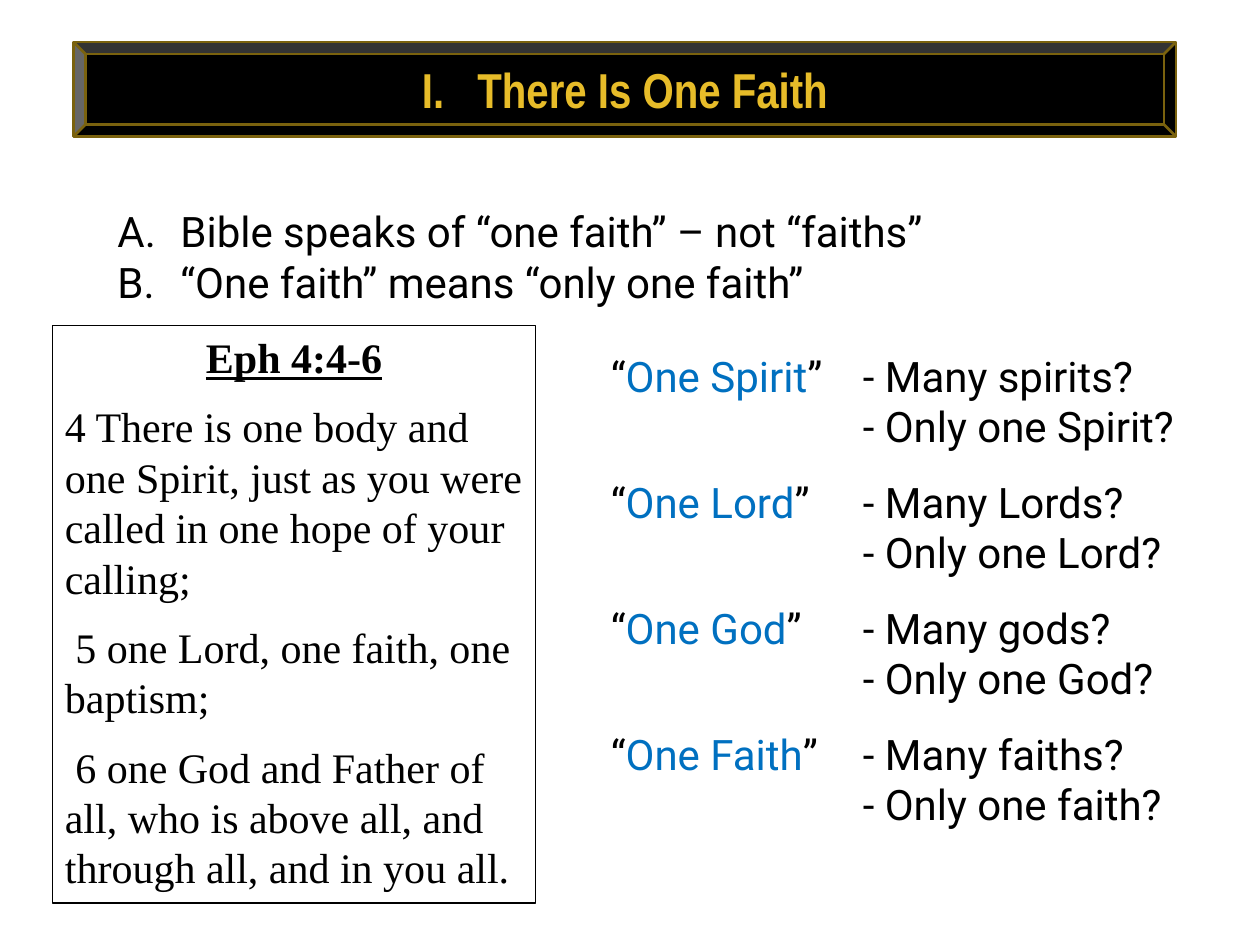
import dataclasses

import pptx
import pptx.dml.color
import pptx.enum.shapes
import pptx.enum.text
import pptx.oxml.ns
import pptx.util
from lxml import etree

SHAPE = pptx.enum.shapes.MSO_SHAPE
ALIGN = pptx.enum.text.PP_ALIGN
ANCHOR = pptx.enum.text.MSO_ANCHOR
AUTO_SIZE = pptx.enum.text.MSO_AUTO_SIZE
Pt = pptx.util.Pt
Inches = pptx.util.Inches

COLS, ROWS = 120, 90


@dataclasses.dataclass(frozen=True)
class Theme:
    ink: str = "000000"
    paper: str = "FFFFFF"
    gold: str = "E7BC29"
    bronze: str = "7A620E"
    blue: str = "0070C0"
    title_font: str = "Arial Narrow"
    body_font: str = "Roboto"
    verse_font: str = "Times New Roman"
    title_size: float = 28
    body_size: float = 24
    leading: float = 28.8
    verse_gap: float = 10.8
    pair_gap: float = 14.4


class SlideBuilder:
    def __init__(self, prs, theme):
        self.theme = theme
        self.cell_w = prs.slide_width / COLS
        self.cell_h = prs.slide_height / ROWS
        self.s = prs.slides.add_slide(prs.slide_layouts[5])

    def box(self, col, row, cols, rows):
        """Turn grid cells into left, top, width and height."""
        return (round(col * self.cell_w), round(row * self.cell_h),
                round(cols * self.cell_w), round(rows * self.cell_h))

    def panel(self, kind, grid, fill, line, width):
        sp = self.s.shapes.add_shape(kind, *self.box(*grid))
        sp.shadow.inherit = False
        sp.fill.solid()
        sp.fill.fore_color.rgb = pptx.dml.color.RGBColor.from_string(fill)
        sp.line.color.rgb = pptx.dml.color.RGBColor.from_string(line)
        sp.line.width = Pt(width)
        return sp

    def title(self, text, grid):
        sp = self.s.shapes.title
        sp.left, sp.top, sp.width, sp.height = self.box(*grid)
        # The placeholder comes first in the tree; lift it above its frame.
        self.s.shapes._spTree.append(sp._element)
        tf = self.frame(sp, ANCHOR.MIDDLE)
        t = self.theme
        p = self.paragraph(
            tf, [(text, t.gold)], {"alignment": ALIGN.CENTER},
            {"name": t.title_font, "size": Pt(t.title_size), "bold": True})
        self.indent(p, 0.44, -0.44, "romanUcPeriod")

    def text_box(self, grid):
        return self.frame(self.s.shapes.add_textbox(*self.box(*grid)))

    def frame(self, sp, anchor=ANCHOR.TOP):
        tf = sp.text_frame
        settings = {"word_wrap": True, "auto_size": AUTO_SIZE.NONE,
                    "vertical_anchor": anchor}
        for name, value in settings.items():
            setattr(tf, name, value)
        return tf

    def paragraph(self, tf, runs, layout=None, font=None):
        """Fill the first paragraph if it is free, else add one."""
        t = self.theme
        p = tf.paragraphs[0]
        if p.runs:
            p = tf.add_paragraph()
        layout = {"alignment": ALIGN.LEFT, "space_before": Pt(0)} | (layout or {})
        for name, value in layout.items():
            setattr(p, name, value)
        font = {"name": t.body_font, "size": Pt(t.body_size)} | (font or {})
        for text, color in runs:
            r = p.add_run()
            r.text = text
            for name, value in font.items():
                setattr(r.font, name, value)
            r.font.color.rgb = pptx.dml.color.RGBColor.from_string(color)
        return p

    def indent(self, p, left, first, numbering=None):
        p_pr = p._p.get_or_add_pPr()
        p_pr.set("marL", str(Inches(left)))
        p_pr.set("indent", str(Inches(first)))
        if numbering:
            etree.SubElement(p_pr, pptx.oxml.ns.qn("a:buAutoNum"), type=numbering)

    def numbered_list(self, grid, items):
        tf = self.text_box(grid)
        for item in items:
            p = self.paragraph(tf, [(item, self.theme.ink)],
                               {"line_spacing": Pt(self.theme.leading)})
            self.indent(p, 0.5, -0.5, "alphaUcPeriod")

    def scripture(self, grid, heading, verses):
        t = self.theme
        tf = self.frame(self.panel(SHAPE.RECTANGLE, grid, t.paper, t.ink, 0.75))
        leading = {"line_spacing": Pt(t.leading)}
        font = {"name": t.verse_font}
        self.paragraph(tf, [(heading, t.ink)],
                       leading | {"alignment": ALIGN.CENTER},
                       font | {"bold": True, "underline": True})
        for verse in verses:
            self.paragraph(tf, [(verse, t.ink)],
                           leading | {"space_before": Pt(t.verse_gap)}, font)

    def questions(self, grid, pairs):
        t = self.theme
        tf = self.text_box(grid)
        leading = {"line_spacing": Pt(t.leading)}
        for i, (one, many) in enumerate(pairs):
            gap = {"space_before": Pt(t.pair_gap if i else 0)}
            runs = [("“", t.ink), (f"One {one}", t.blue),
                    (f"”\t- Many {many}?", t.ink)]
            self.paragraph(tf, runs, leading | gap)
            answer = one if one != "Faith" else "faith"
            p = self.paragraph(tf, [(f"- Only one {answer}?", t.ink)], leading)
            self.indent(p, 2, 0)


def main():
    prs = pptx.Presentation()
    prs.slide_width, prs.slide_height = Inches(10), Inches(7.5)
    theme = Theme()
    slide = SlideBuilder(prs, theme)

    banner = (7, 4, 105, 9)
    slide.panel(SHAPE.BEVEL, banner, theme.ink, theme.bronze, 1.5)
    slide.title("There Is One Faith", banner)
    slide.numbered_list((10, 19, 88, 11), [
        "Bible speaks of “one faith” – not “faiths”",
        "“One faith” means “only one faith”",
    ])
    slide.scripture((5, 31, 46, 55), "Eph 4:4-6", [
        "4 There is one body and one Spirit, just as you were called "
        "in one hope of your calling;",
        " 5 one Lord, one faith, one baptism;",
        " 6 one God and Father of all, who is above all, and through all, "
        "and in you all.",
    ])
    slide.questions((57, 32.75, 60, 47.25), [
        ("Spirit", "spirits"), ("Lord", "Lords"),
        ("God", "gods"), ("Faith", "faiths"),
    ])
    prs.save("out.pptx")


if __name__ == "__main__":
    main()
